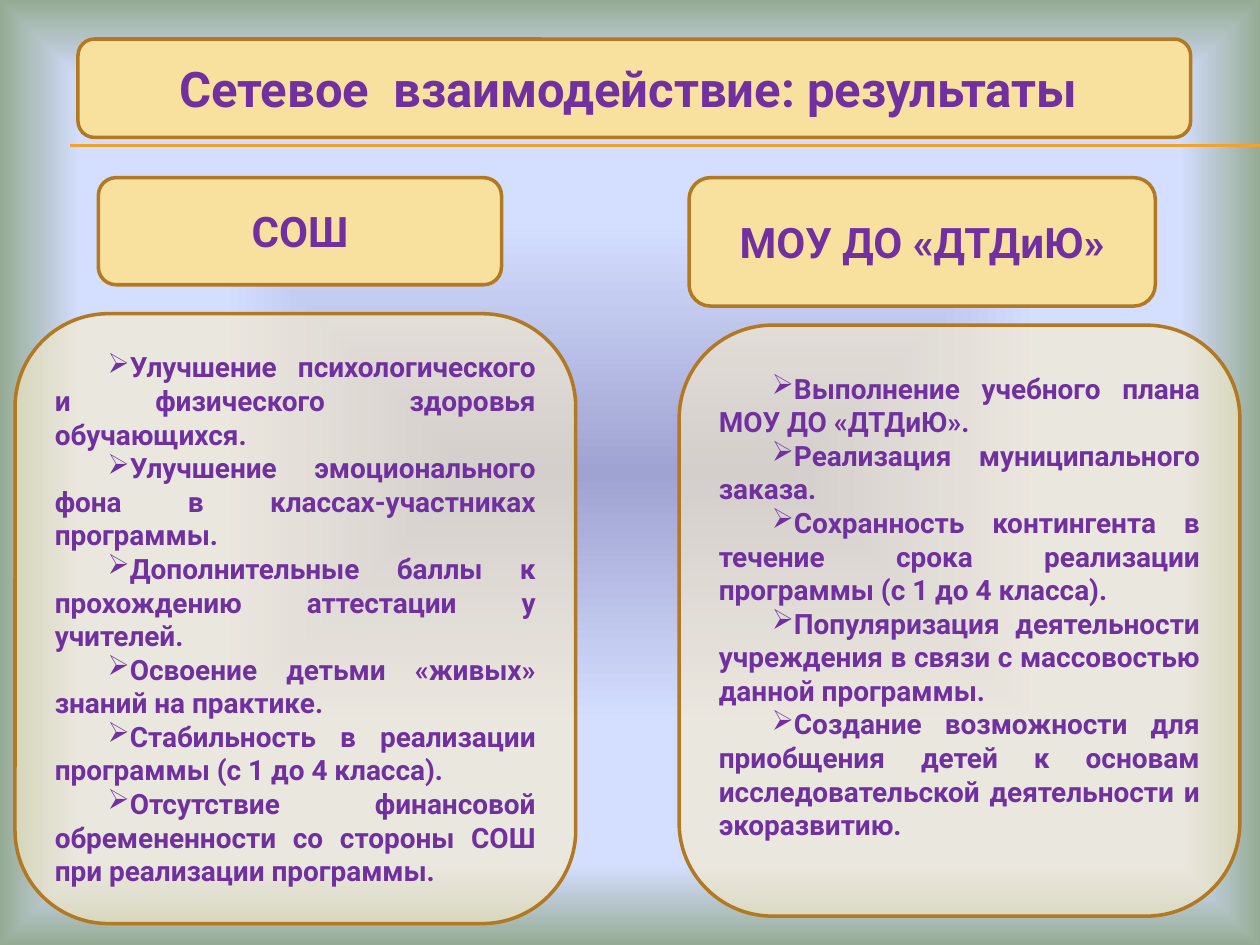
"""Build a slide comparing the results of a school partnership for both sides."""
from lxml.etree import SubElement
from pptx import Presentation
from pptx.dml.color import RGBColor
from pptx.enum.shapes import MSO_CONNECTOR, MSO_SHAPE
from pptx.enum.text import MSO_ANCHOR, PP_ALIGN
from pptx.oxml import parse_xml
from pptx.oxml.ns import nsdecls, qn
from pptx.util import Pt

PURPLE = RGBColor(0x70, 0x30, 0xA0)
BROWN = RGBColor(0xB2, 0x78, 0x22)
SAND = RGBColor(0xF8, 0xE1, 0x9F)
CREAM = RGBColor(0xFB, 0xEE, 0xC9)
ORANGE = RGBColor(0xF0, 0xA2, 0x2E)
BACKGROUND_STOPS = [
    (0, RGBColor(0x9F, 0xA3, 0xD1)),
    (53, RGBColor(0xD4, 0xDE, 0xFF)),
    (83, RGBColor(0xD4, 0xDE, 0xFF)),
    (100, RGBColor(0x96, 0xAB, 0x94)),
]

FONT = "Roboto"
WIDTH, HEIGHT = 720, 540
RULE_LEFT, RULE_TOPS = 40.3, (82.8, 83.5)
PANEL_WIDTH = 320.4
PANEL_OPACITY = 59
FIRST_LINE_INDENT = 30.24

HEADINGS = [
    ("Сетевое  взаимодействие: результаты ", 28, (44.6, 22.3, 635.8, 56.2)),
    ("СОШ", 24, (56.2, 101.5, 230.4, 61.2)),
    ("МОУ ДО «ДТДиЮ»", 24, (393.8, 101.5, 266.4, 73.4)),
]
PANELS = [
    {
        "left": 388.1, "top": 185.8, "height": 337.7, "bottom_inset": 20,
        "results": [
            "Выполнение учебного плана МОУ ДО «ДТДиЮ».",
            "Реализация муниципального заказа.",
            "Сохранность контингента в течение срока реализации программы (с 1 до 4 класса).",
            "Популяризация деятельности учреждения в связи с массовостью данной программы.",
            "Создание возможности для приобщения детей к основам исследовательской деятельности и экоразвитию.",
        ],
    },
    {
        "left": 8.6, "top": 179.3, "height": 348.5, "bottom_inset": 3.6,
        "results": [
            "Улучшение психологического и физического здоровья обучающихся.",
            "Улучшение эмоционального фона в классах-участниках программы.",
            "Дополнительные баллы к прохождению аттестации у учителей.",
            "Освоение детьми «живых» знаний на практике.",
            "Стабильность в реализации программы (с 1 до 4 класса).",
            "Отсутствие финансовой обремененности со стороны СОШ при реализации программы.",
        ],
    },
]


def paint_background(slide):
    stops = "".join(
        f'<a:gs pos="{position * 1000}"><a:srgbClr val="{color}"/></a:gs>'
        for position, color in BACKGROUND_STOPS
    )
    background = parse_xml(
        f'<p:bg {nsdecls("p", "a")}><p:bgPr><a:gradFill rotWithShape="1">'
        f'<a:gsLst>{stops}</a:gsLst><a:path path="shape">'
        '<a:fillToRect l="50000" t="50000" r="50000" b="50000"/></a:path>'
        "</a:gradFill><a:effectLst/></p:bgPr></p:bg>"
    )
    slide.element.cSld.insert(0, background)


def add_rule(slide, top):
    rule = slide.shapes.add_connector(
        MSO_CONNECTOR.STRAIGHT, Pt(RULE_LEFT), Pt(top), Pt(WIDTH), Pt(top)
    )
    rule.line.color.rgb = ORANGE
    rule.line.width = Pt(0.75)
    SubElement(rule.element.spPr, qn("a:effectLst"))


def add_box(slide, bounds, fill, paragraphs, size, alignment):
    box = slide.shapes.add_shape(MSO_SHAPE.ROUNDED_RECTANGLE, *map(Pt, bounds))
    box.shadow.inherit = False
    box.fill.solid()
    box.fill.fore_color.rgb = fill
    box.line.color.rgb = BROWN
    box.line.width = Pt(2)
    frame = box.text_frame
    frame.word_wrap = True
    frame.vertical_anchor = MSO_ANCHOR.MIDDLE
    frame.text = "\n".join(paragraphs)
    for para in frame.paragraphs:
        para.alignment = alignment
        para.font.name = FONT
        para.font.size = Pt(size)
        para.font.bold = True
        para.font.color.rgb = PURPLE
    return box


def add_bullet(para):
    properties = para._p.get_or_add_pPr()
    properties.set("marL", "0")
    properties.set("indent", str(Pt(FIRST_LINE_INDENT)))
    bullet = parse_xml(f'<a:buChar {nsdecls("a")} char="➢"/>')
    properties.insert(0, bullet)


def add_panel(slide, panel):
    bounds = (panel["left"], panel["top"], PANEL_WIDTH, panel["height"])
    box = add_box(slide, bounds, CREAM, panel["results"], 16, PP_ALIGN.JUSTIFY)
    color = box.element.spPr.find(qn("a:solidFill")).find(qn("a:srgbClr"))
    SubElement(color, qn("a:alpha"), val=str(PANEL_OPACITY * 1000))
    box.text_frame.margin_bottom = Pt(panel["bottom_inset"])
    for para in box.text_frame.paragraphs:
        add_bullet(para)


def main():
    deck = Presentation()
    deck.slide_width, deck.slide_height = Pt(WIDTH), Pt(HEIGHT)
    slide = deck.slides.add_slide(deck.slide_layouts[6])
    paint_background(slide)
    for top in RULE_TOPS:
        add_rule(slide, top)
    for text, size, bounds in HEADINGS:
        add_box(slide, bounds, SAND, [text], size, PP_ALIGN.CENTER)
    for panel in PANELS:
        add_panel(slide, panel)
    deck.save("out.pptx")


if __name__ == "__main__":
    main()
